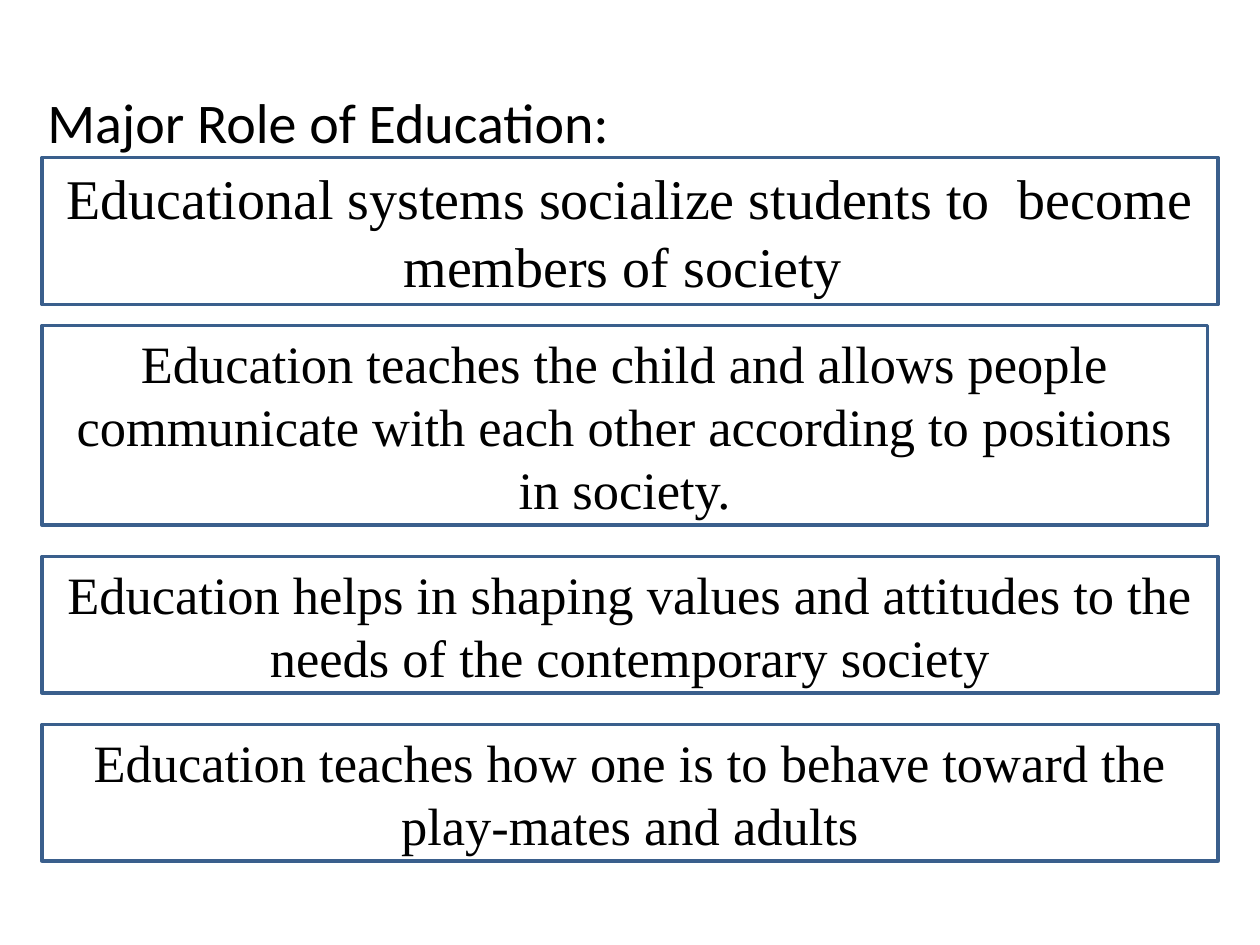
from pptx import Presentation
from pptx.dml.color import RGBColor
from pptx.enum.shapes import MSO_SHAPE as Shape
from pptx.enum.text import MSO_ANCHOR as Anchor, PP_ALIGN as Align
from pptx.util import Pt

EMU_PER_PX = 7620  # 120 px to the inch
COLORS = {"text": "000000", "border": "3A5F8C"}
BOX_LEFT = 40
ROLES = [  # top, width, height, font size, text
    (150, 1120, 140, 32,
     "Educational systems socialize students to  become members of society "),
    (310, 1110, 190, 30,
     "Education teaches the child and allows people communicate with each "
     "other according to positions in society."),
    (530, 1120, 130, 30,
     "Education helps in shaping values and attitudes to the needs of the "
     "contemporary society"),
    (690, 1120, 130, 30,
     "Education teaches how one is to behave toward the play-mates and adults"),
]


def px(*lengths):
    return [length * EMU_PER_PX for length in lengths]


def color(name):
    return RGBColor.from_string(COLORS[name])


class SlideBuilder:
    """Holds the fonts and the slide being drawn."""

    heading_font = "Calibri"
    body_font = "Times New Roman"

    def __init__(self, slide):
        self.slide = slide

    def set_text(self, shape, text, font_name, size, align):
        frame = shape.text_frame
        frame.word_wrap = True
        frame.text = text
        paragraph = frame.paragraphs[0]
        paragraph.alignment = align
        font = paragraph.runs[0].font
        font.name = font_name
        font.size = Pt(size)
        font.color.rgb = color("text")

    def heading(self, left, top, width, height, text):
        shape = self.slide.shapes.add_textbox(*px(left, top, width, height))
        frame = shape.text_frame
        frame.margin_left = frame.margin_right = 0
        frame.margin_top = frame.margin_bottom = 0
        self.set_text(shape, text, self.heading_font, 32, Align.LEFT)

    def box(self, left, top, width, height, size, text):
        shape = self.slide.shapes.add_shape(
            Shape.RECTANGLE, *px(left, top, width, height))
        shape.shadow.inherit = False
        shape.fill.background()
        shape.line.color.rgb = color("border")
        shape.line.width = Pt(2)
        shape.text_frame.vertical_anchor = Anchor.MIDDLE
        self.set_text(shape, text, self.body_font, size, Align.CENTER)


def main():
    presentation = Presentation()
    presentation.slide_width, presentation.slide_height = px(1200, 900)
    slide = presentation.slides.add_slide(presentation.slide_layouts[6])
    builder = SlideBuilder(slide)
    builder.heading(45, 83, 1110, 65, "Major Role of Education:")
    for top, width, height, size, text in ROLES:
        builder.box(BOX_LEFT, top, width, height, size, text)
    presentation.save("out.pptx")


if __name__ == "__main__":
    main()
